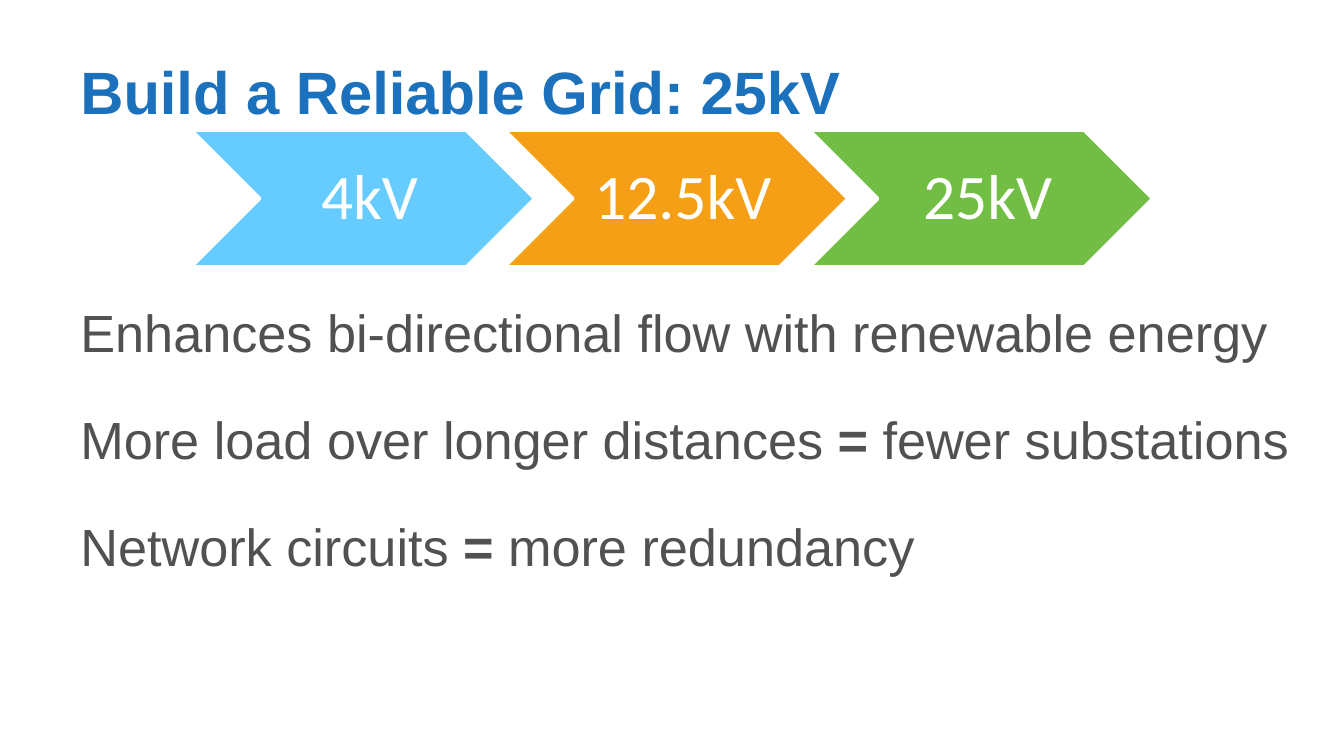
from pptx import Presentation
from pptx.dml.color import RGBColor
from pptx.enum.shapes import MSO_SHAPE as Preset
from pptx.enum.text import MSO_ANCHOR as Anchor, PP_ALIGN as Align
from pptx.util import Cm, Pt

WHITE = RGBColor(0xFF, 0xFF, 0xFF)
BLUE = RGBColor(0x1B, 0x71, 0xBC)
GREY = RGBColor(0x50, 0x51, 0x53)
SKY = RGBColor(0x66, 0xCC, 0xFF)
ORANGE = RGBColor(0xF4, 0x9F, 0x15)
GREEN = RGBColor(0x72, 0xBE, 0x45)

VOLTAGES = [("4kV", SKY, 3.61), ("12.5kV", ORANGE, 9.53), ("25kV", GREEN, 15.29)]
BENEFITS = [
    ["Enhances bi-directional flow with renewable energy"],
    ["More load over longer distances ", "=", " fewer substations"],
    ["Network circuits", " = ", "more redundancy"],
]


def add_run(paragraph, text, *, size, color, font="Arial", bold=False):
    run = paragraph.add_run()
    run.text = text
    run.font.name = font
    run.font.size = Pt(size)
    run.font.bold = bold
    run.font.color.rgb = color


def set_margins(frame, left, top, right, bottom):
    frame.margin_left, frame.margin_top = Cm(left), Cm(top)
    frame.margin_right, frame.margin_bottom = Cm(right), Cm(bottom)


def add_text_frame(slide, box, top_margin):
    frame = slide.shapes.add_textbox(*map(Cm, box)).text_frame
    frame.word_wrap = True
    frame.vertical_anchor = Anchor.TOP
    set_margins(frame, 0.25, top_margin, 0.25, 0.13)
    return frame


def add_title(slide, box):
    frame = add_text_frame(slide, box, 0.25)
    add_run(frame.paragraphs[0], "Build a Reliable Grid: 25kV", size=32, color=BLUE, bold=True)


def add_voltage_step(slide, box, label, color):
    shape = slide.shapes.add_shape(Preset.CHEVRON, *map(Cm, box))
    shape.shadow.inherit = False
    shape.fill.solid()
    shape.fill.fore_color.rgb = color
    shape.line.color.rgb = WHITE
    shape.line.width = Pt(2)
    frame = shape.text_frame
    frame.word_wrap = False
    frame.vertical_anchor = Anchor.MIDDLE
    set_margins(frame, 0.38, 0.13, 0.13, 0.13)
    paragraph = frame.paragraphs[0]
    paragraph.alignment = Align.CENTER
    paragraph.line_spacing = 0.9
    add_run(paragraph, label, size=34, color=WHITE, font="Calibri")


def add_benefits(slide, box):
    frame = add_text_frame(slide, box, 0.22)
    for index, parts in enumerate(BENEFITS):
        paragraph = frame.add_paragraph() if index else frame.paragraphs[0]
        if index:
            paragraph.space_before = Pt(23.7)
        for text in parts:
            add_run(paragraph, text, size=28, color=GREY, bold=text.strip() == "=")


def main():
    presentation = Presentation()
    presentation.slide_width, presentation.slide_height = Cm(25.4), Cm(14.29)
    slide = presentation.slides.add_slide(presentation.slide_layouts[6])
    for label, color, left in VOLTAGES:
        add_voltage_step(slide, (left, 2.46, 6.5, 2.59), label, color)
    add_title(slide, (1.27, 0.79, 22.86, 2.34))
    add_benefits(slide, (1.27, 5.46, 23.65, 5.51))
    presentation.save("out.pptx")


if __name__ == "__main__":
    main()
